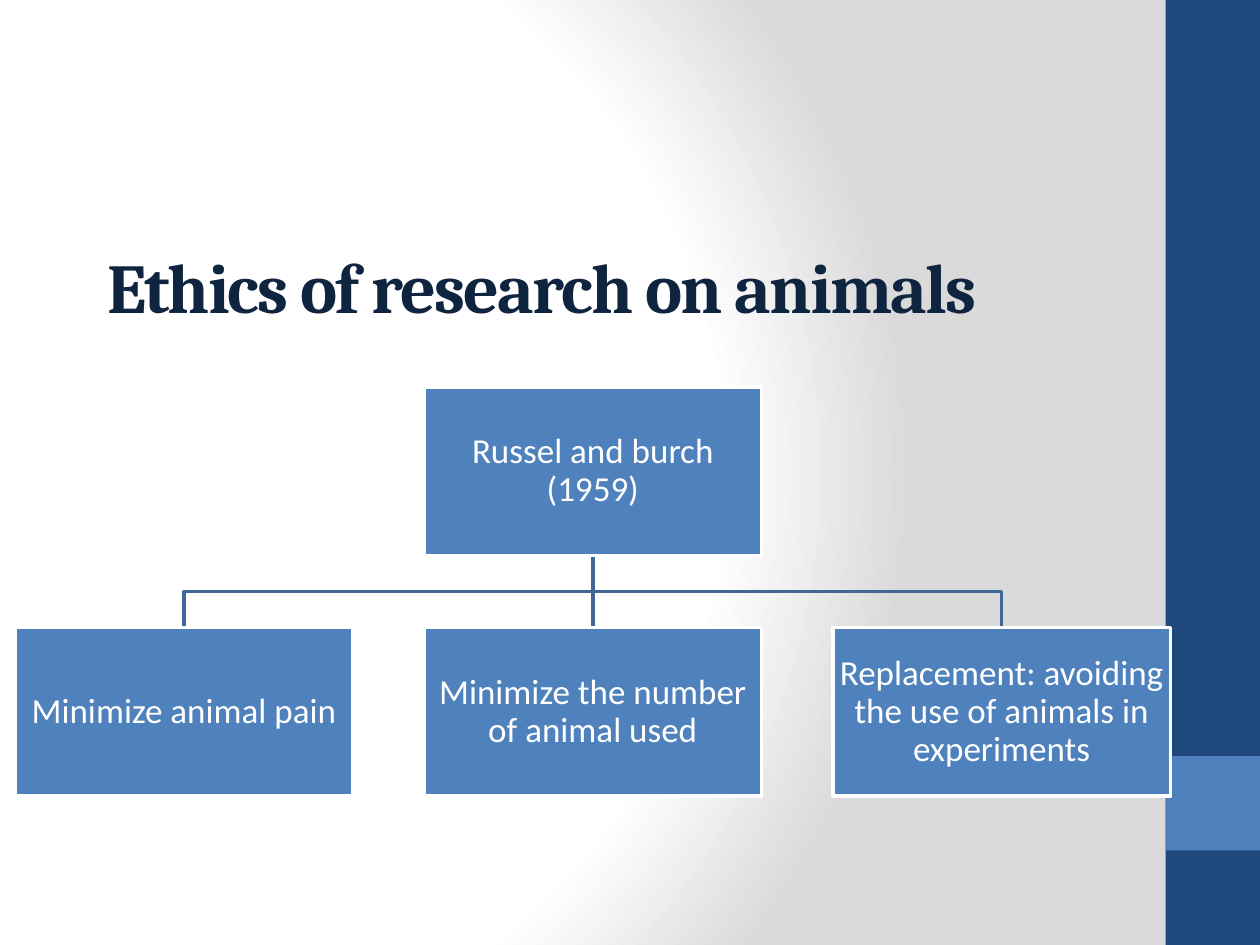
from dataclasses import dataclass

from lxml import etree
from pptx import Presentation
from pptx.dml.color import RGBColor
from pptx.enum import shapes as kinds, text as txt
from pptx.oxml import parse_xml
from pptx.oxml.ns import qn
from pptx.util import Inches, Pt

A_NS = "http://schemas.openxmlformats.org/drawingml/2006/main"


@dataclass(frozen=True)
class Theme:
    white: str = "FFFFFF"
    grey: str = "DADADA"
    navy: str = "1F497D"
    blue: str = "4F81BD"
    branch: str = "3F6797"
    heading: str = "0F243E"
    heading_font: str = "Cambria"
    body_font: str = "Calibri"
    heading_size: int = 40
    body_size: int = 20
    line_width: int = 2


THEME = Theme()


def rgb(value):
    return RGBColor.from_string(value)


def add_run(paragraph, words, font_name, size, color, bold=False):
    run = paragraph.add_run()
    run.text = words
    run.font.name, run.font.size, run.font.bold = font_name, Pt(size), bold
    run.font.color.rgb = rgb(color)
    return run


def style_line(line, color):
    line.color.rgb = rgb(color)
    line.width = Pt(THEME.line_width)


def add_block(slide, left, top, width, height, fill):
    block = slide.shapes.add_shape(kinds.MSO_SHAPE.RECTANGLE, left, top, width, height)
    block.shadow.inherit = False
    block.fill.solid()
    block.fill.fore_color.rgb = rgb(fill)
    block.line.fill.background()
    return block


def paint_background(slide):
    """Circular gradient, white at the left centre and grey towards the right."""
    slide.background.fill.solid()
    properties = slide.background.fill._xPr
    stops = "".join(
        f'<a:gs pos="{share * 1000}"><a:srgbClr val="{color}"/></a:gs>'
        for share, color in ((0, THEME.white), (75, THEME.white), (100, THEME.grey)))
    gradient = parse_xml(
        f'<a:gradFill xmlns:a="{A_NS}" rotWithShape="1"><a:gsLst>{stops}</a:gsLst>'
        '<a:path path="circle"><a:fillToRect l="20000" t="50000" r="100000" b="50000"/>'
        '</a:path></a:gradFill>')
    properties.replace(properties.find(qn("a:solidFill")), gradient)


def add_sidebar(slide, left, top, width, height):
    add_block(slide, left, top, width, height, THEME.navy)
    add_block(slide, left, top + height - 2 * width, width, width, THEME.blue)


def set_title(slide, left, top, width, height, words):
    title = slide.shapes.title
    title.left, title.top, title.width, title.height = left, top, width, height
    frame = title.text_frame
    frame.word_wrap = True
    frame.auto_size = txt.MSO_AUTO_SIZE.NONE
    frame.vertical_anchor = txt.MSO_ANCHOR.BOTTOM
    heading = frame.paragraphs[0]
    heading.alignment = txt.PP_ALIGN.LEFT
    run = add_run(heading, words, THEME.heading_font, THEME.heading_size, THEME.heading, True)
    run.font._element.set("spc", "-100")


def add_node(slide, left, top, width, height, words):
    node = add_block(slide, left, top, width, height, THEME.blue)
    style_line(node.line, THEME.white)
    frame = node.text_frame
    frame.word_wrap = True
    frame.vertical_anchor = txt.MSO_ANCHOR.MIDDLE
    frame.margin_left = frame.margin_right = Inches(0.01)
    frame.margin_top = frame.margin_bottom = Inches(0.01)
    label = frame.paragraphs[0]
    label.alignment = txt.PP_ALIGN.CENTER
    label.line_spacing = 0.9
    add_run(label, words, THEME.body_font, THEME.body_size, THEME.white)
    return node


def add_elbow(slide, start_x, start_y, end_x, end_y):
    middle_y = (start_y + end_y) // 2
    outline = slide.shapes.build_freeform(start_x, start_y)
    outline.add_line_segments(
        [(start_x, middle_y), (end_x, middle_y), (end_x, end_y)], close=False)
    elbow = outline.convert_to_shape()
    elbow.shadow.inherit = False
    elbow.fill.background()
    style_line(elbow.line, THEME.branch)


def add_stem(slide, x, start_y, end_y):
    stem = slide.shapes.add_connector(kinds.MSO_CONNECTOR.STRAIGHT, x, start_y, x, end_y)
    etree.SubElement(stem._element.spPr, qn("a:effectLst"))
    style_line(stem.line, THEME.branch)
    return stem


def add_hierarchy(slide, left, top, width, height, source, principles):
    """One source above a row of three principles, with branches behind the nodes."""
    node_width, node_height = Inches(2.68), Inches(1.34)
    pitch = (width - node_width) // (len(principles) - 1)
    lefts = [left + i * pitch for i in range(len(principles))]
    source_left = left + (width - node_width) // 2
    source_x, source_bottom = source_left + node_width // 2, top + node_height
    row_top = top + height - node_height

    for outer_left in (lefts[-1], lefts[0]):
        add_elbow(slide, source_x, source_bottom, outer_left + node_width // 2, row_top)
    stem = add_stem(slide, source_x, source_bottom, row_top)

    source_node = add_node(slide, source_left, top, node_width, node_height, source)
    principle_nodes = [add_node(slide, x, row_top, node_width, node_height, words)
                       for x, words in zip(lefts, principles)]
    stem.begin_connect(source_node, 2)
    stem.end_connect(principle_nodes[len(principles) // 2], 0)


def main():
    deck = Presentation()
    deck.slide_width, deck.slide_height = Inches(10), Inches(7.5)
    slide = deck.slides.add_slide(deck.slide_layouts[0])
    subtitle = slide.placeholders[1]._element
    subtitle.getparent().remove(subtitle)

    paint_background(slide)
    add_sidebar(slide, Inches(9.25), Inches(0), Inches(0.75), Inches(7.5))
    set_title(slide, Inches(0.75), Inches(1.62), Inches(8.5), Inches(1.03),
              "Ethics of research on animals")
    add_hierarchy(slide, Inches(0.12), Inches(3.07), Inches(9.17), Inches(3.25),
                  "Russel and burch (1959)",
                  ["Minimize animal pain",
                   "Minimize the number of animal used",
                   "Replacement: avoiding the use of animals in experiments"])
    deck.save("out.pptx")


if __name__ == "__main__":
    main()
